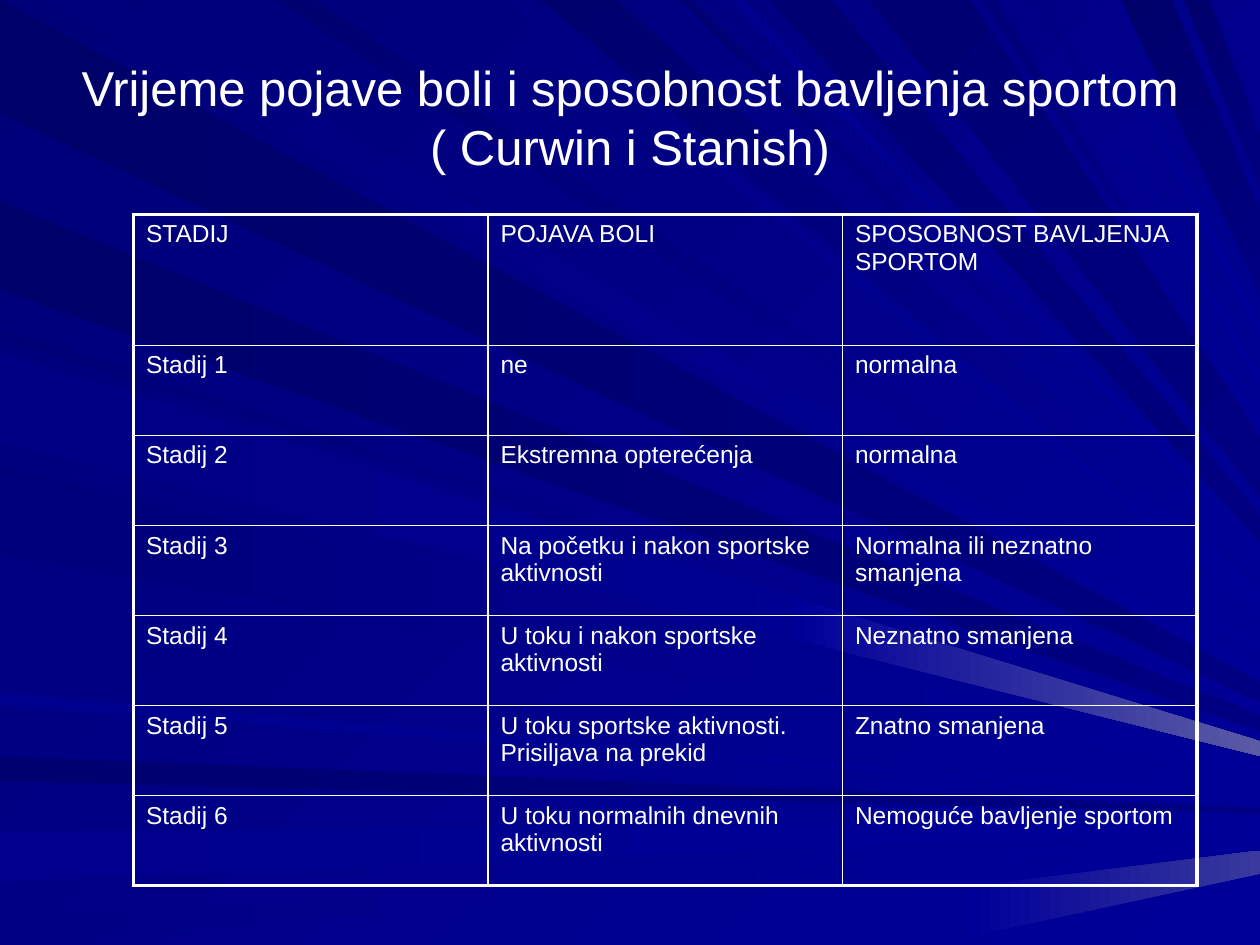
from dataclasses import dataclass
from itertools import product

from lxml.etree import SubElement
from pptx import Presentation
from pptx.dml.color import RGBColor
from pptx.enum.text import MSO_ANCHOR as Anchor, PP_ALIGN as Align
from pptx.oxml.ns import qn
from pptx.util import Cm, Pt


@dataclass(frozen=True)
class Theme:
    """Colours, font and sizes of the slide."""
    font: str = "Arial"
    text: str = "FFFFFF"
    backdrop: str = "000078"
    dark: str = "000080"
    bright: str = "000099"
    glow: str = "5A5AA6"
    faint_glow: str = "39399E"
    title_size: float = 28
    table_size: float = 14
    outer_line: float = 2.25
    inner_line: float = 1


@dataclass(frozen=True)
class Box:
    """A region of the slide, in centimetres."""
    left: float
    top: float
    width: float
    height: float

    def lengths(self):
        """Return the four sides as lengths."""
        return tuple(Cm(side) for side in (self.left, self.top, self.width, self.height))


@dataclass(frozen=True)
class Ray:
    """A beam from a stretch of the left or top edge, in percent of the width."""
    first: float
    last: float
    start: str
    end: str
    cut: float = 0


THEME = Theme()
SLIDE_BOX = Box(0, 0, 25.4, 19.05)
TITLE_BOX = Box(1.27, 0.76, 22.86, 3.18)
TABLE_BOX = Box(2.69, 4.32, 21.44, 13.54)
HEADER_HEIGHT = 2.64
FOCUS = (120, 65)

LEFT_RAYS = [
    Ray(0, 9, "000069", THEME.dark),
    Ray(60, 62, "000071", THEME.dark),
    Ray(66, 70, "00008C", THEME.bright),
    Ray(73, 75, "000085", THEME.bright),
    Ray(80, 91, THEME.bright, THEME.faint_glow, 77),
    Ray(26, 27, "000076", THEME.bright),
    Ray(16, 23, "00006B", THEME.dark),
    Ray(37, 44, "00007B", THEME.bright),
    Ray(55, 56, "00008E", THEME.bright),
    Ray(28, 35, "000085", THEME.bright),
    Ray(28, 35, THEME.bright, THEME.glow, 63),
]
TOP_RAYS = [
    Ray(3, 10, "00007B", THEME.bright),
    Ray(22, 25, "000070", THEME.bright),
    Ray(40, 42, "000083", THEME.bright),
    Ray(43, 49, "00006D", THEME.bright),
    Ray(54, 55, "000073", THEME.bright),
    Ray(58, 59, "00008E", THEME.bright),
    Ray(61, 66, "000073", THEME.dark),
    Ray(69, 77, "000073", THEME.dark),
    Ray(78, 79, "000078", THEME.bright),
    Ray(82, 83, "000085", THEME.bright),
    Ray(86, 87, "00008A", THEME.bright),
    Ray(89, 93, "00006B", THEME.dark),
    Ray(94, 96, "00006D", THEME.dark),
]

TITLE = "Vrijeme pojave boli i sposobnost bavljenja sportom ( Curwin i Stanish)"
STAGES = [
    ("STADIJ", "POJAVA BOLI", "SPOSOBNOST BAVLJENJA SPORTOM"),
    ("Stadij 1", "ne", "normalna"),
    ("Stadij 2", "Ekstremna opterećenja", "normalna"),
    ("Stadij 3", "Na početku i nakon sportske aktivnosti", "Normalna ili neznatno smanjena"),
    ("Stadij 4", "U toku i nakon sportske aktivnosti", "Neznatno smanjena"),
    ("Stadij 5", "U toku sportske aktivnosti. Prisiljava na prekid", "Znatno smanjena"),
    ("Stadij 6", "U toku normalnih dnevnih aktivnosti", "Nemoguće bavljenje sportom"),
]


def paint(fill, start, end, angle):
    """Fill with a gradient at a clockwise angle."""
    fill.gradient()
    fill.gradient_angle = -angle % 360
    for stop, colour in zip(fill.gradient_stops, (start, end)):
        stop.color.rgb = RGBColor.from_string(colour)


def style_text(paragraph, size):
    """Give a paragraph the theme's font and colour."""
    paragraph.font.name = THEME.font
    paragraph.font.size = Pt(size)
    paragraph.font.color.rgb = RGBColor.from_string(THEME.text)


def toward_focus(origin, x):
    """Return the point at x on the line from an edge point to the focus."""
    x = max(x, origin[0])
    share = (x - origin[0]) / (FOCUS[0] - origin[0])
    return x, origin[1] + share * (FOCUS[1] - origin[1])


def add_ray(slide, box, ray, origins, angle):
    """Draw one ray between its two origins and the right edge."""
    first, last = origins
    corners = [toward_focus(first, ray.cut), toward_focus(first, 100),
               toward_focus(last, 100), toward_focus(last, ray.cut)]
    unit = box.width / 100
    points = [(Cm(box.left + x * unit), Cm(box.top + y * unit)) for x, y in corners]
    builder = slide.shapes.build_freeform(*points[0])
    builder.add_line_segments(points[1:], close=True)
    shape = builder.convert_to_shape()
    shape.shadow.inherit = False
    shape.line.fill.background()
    paint(shape.fill, ray.start, ray.end, angle)


def add_background(slide, box):
    """Paint the backdrop and its fan of rays."""
    paint(slide.background.fill, THEME.backdrop, THEME.bright, 45)
    for ray in LEFT_RAYS:
        add_ray(slide, box, ray, ((0, ray.first), (0, ray.last)), 0)
    for ray in TOP_RAYS:
        add_ray(slide, box, ray, ((ray.first, 0), (ray.last, 0)), 45)


def add_title(slide, box):
    """Write the centred title."""
    frame = slide.shapes.add_textbox(*box.lengths()).text_frame
    frame.word_wrap = True
    frame.vertical_anchor = Anchor.MIDDLE
    paragraph = frame.paragraphs[0]
    paragraph.text = TITLE
    paragraph.alignment = Align.CENTER
    style_text(paragraph, THEME.title_size)


def add_border(cell, side, width):
    """Draw one side of a cell."""
    line = SubElement(cell._tc.get_or_add_tcPr(), qn(f"a:ln{side}"), w=str(Pt(width)))
    SubElement(SubElement(line, qn("a:solidFill")), qn("a:srgbClr"), val=THEME.text)


def add_stage_table(slide, box):
    """Build the table of stages with a heavier outer frame."""
    row_count, column_count = len(STAGES), len(STAGES[0])
    table = slide.shapes.add_table(row_count, column_count, *box.lengths()).table
    table.first_row = table.horz_banding = False
    for row in table.rows:
        row.height = Cm((box.height - HEADER_HEIGHT) / (row_count - 1))
    table.rows[0].height = Cm(HEADER_HEIGHT)
    for row, column in product(range(row_count), range(column_count)):
        cell = table.cell(row, column)
        cell.text = STAGES[row][column]
        style_text(cell.text_frame.paragraphs[0], THEME.table_size)
        outer_sides = {"L": column == 0, "R": column == column_count - 1,
                       "T": row == 0, "B": row == row_count - 1}
        for side, is_outer in outer_sides.items():
            add_border(cell, side, THEME.outer_line if is_outer else THEME.inner_line)
        cell.fill.background()


def main():
    """Build and save the presentation."""
    presentation = Presentation()
    presentation.slide_width = Cm(SLIDE_BOX.width)
    presentation.slide_height = Cm(SLIDE_BOX.height)
    slide = presentation.slides.add_slide(presentation.slide_layouts[6])
    add_background(slide, SLIDE_BOX)
    add_title(slide, TITLE_BOX)
    add_stage_table(slide, TABLE_BOX)
    presentation.save("out.pptx")


if __name__ == "__main__":
    main()
